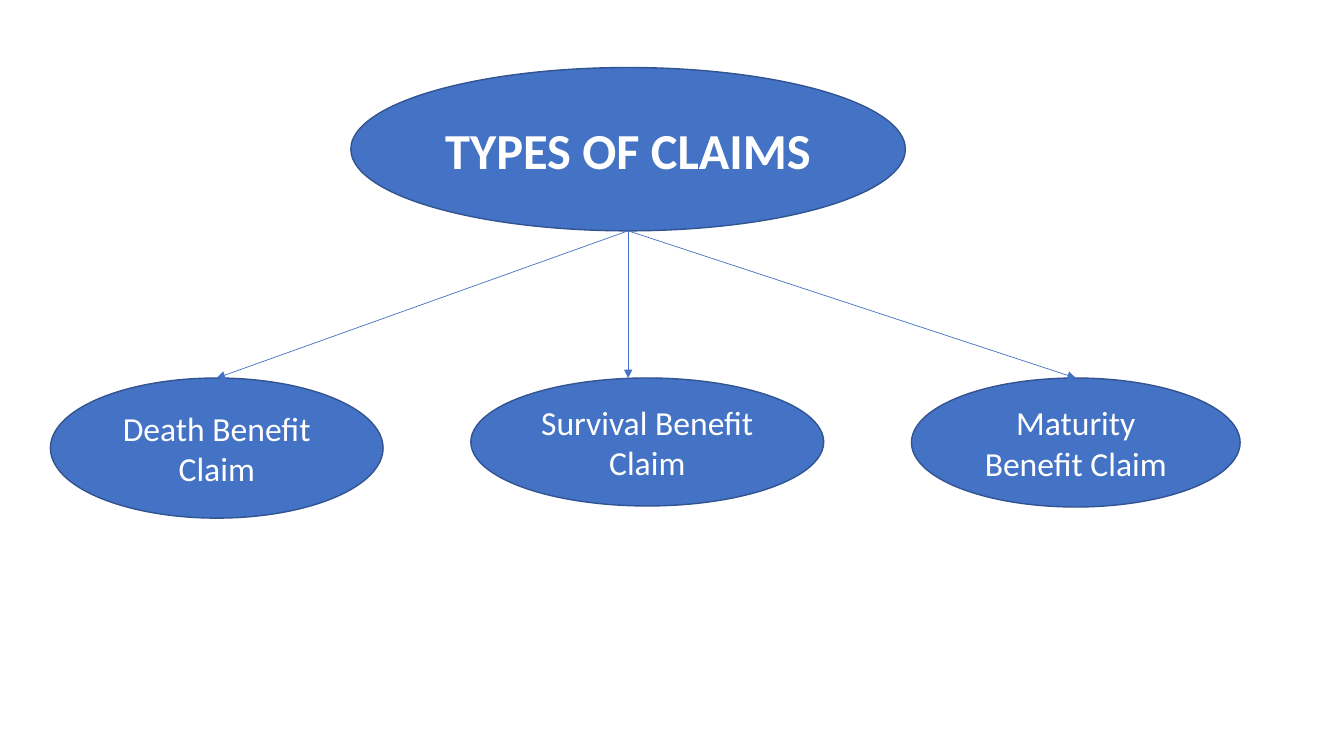
from lxml import etree
from pptx import Presentation
from pptx.dml.color import RGBColor
from pptx.enum.shapes import MSO_CONNECTOR, MSO_SHAPE
from pptx.enum.text import MSO_ANCHOR, PP_ALIGN
from pptx.oxml.ns import qn
from pptx.util import Inches, Pt

ELLIPSE = MSO_SHAPE.OVAL
STRAIGHT = MSO_CONNECTOR.STRAIGHT
MIDDLE = MSO_ANCHOR.MIDDLE
CENTER = PP_ALIGN.CENTER

THEME = {
    "font": "Calibri",
    "fill": RGBColor(0x44, 0x72, 0xC4),
    "outline": RGBColor(0x32, 0x54, 0x91),
    "text": RGBColor(0xFF, 0xFF, 0xFF),
    "heading_size": 36,
    "claim_size": 24,
    "outline_width": 1,
    "arrow_width": 0.5,
}

HEADING = ("TYPES OF CLAIMS", 3.48, 0.67, 5.5, 1.62)
CLAIM_TOP = 3.75
CLAIMS = [
    ("Death Benefit Claim", 0.5, 3.3, 1.39),
    ("Survival Benefit Claim", 4.67, 3.5, 1.27),
    ("Maturity Benefit Claim", 9.04, 3.26, 1.28),
]


def add_bubble(slide, label, left, top, width, height, size, bold=False):
    bubble = slide.shapes.add_shape(
        ELLIPSE, Inches(left), Inches(top), Inches(width), Inches(height))
    bubble.shadow.inherit = False
    bubble.fill.solid()
    bubble.fill.fore_color.rgb = THEME["fill"]
    bubble.line.color.rgb = THEME["outline"]
    bubble.line.width = Pt(THEME["outline_width"])
    frame = bubble.text_frame
    frame.word_wrap = True
    frame.vertical_anchor = MIDDLE
    paragraph = frame.paragraphs[0]
    paragraph.alignment = CENTER
    run = paragraph.add_run()
    run.text = label
    run.font.name = THEME["font"]
    run.font.size = Pt(size)
    run.font.bold = bold
    run.font.color.rgb = THEME["text"]


def add_arrow(slide, start, end):
    arrow = slide.shapes.add_connector(
        STRAIGHT, *[Inches(value) for value in (*start, *end)])
    arrow.line.color.rgb = THEME["fill"]
    arrow.line.width = Pt(THEME["arrow_width"])
    etree.SubElement(arrow.line._get_or_add_ln(), qn("a:tailEnd"), type="triangle")
    etree.SubElement(arrow._element.spPr, qn("a:effectLst"))


def main():
    deck = Presentation()
    deck.slide_width = Inches(13.33)
    deck.slide_height = Inches(7.5)
    slide = deck.slides.add_slide(deck.slide_layouts[6])

    for label, left, width, height in CLAIMS:
        add_bubble(slide, label, left, CLAIM_TOP, width, height, THEME["claim_size"])
    add_bubble(slide, *HEADING, THEME["heading_size"], bold=True)

    _, left, top, width, height = HEADING
    origin = (left + width / 2, top + height)
    first, _, last = [claim_left + claim_width / 2
                      for _, claim_left, claim_width, _ in CLAIMS]
    for target in (first, origin[0], last):
        add_arrow(slide, origin, (target, CLAIM_TOP))

    deck.save("out.pptx")


if __name__ == "__main__":
    main()
